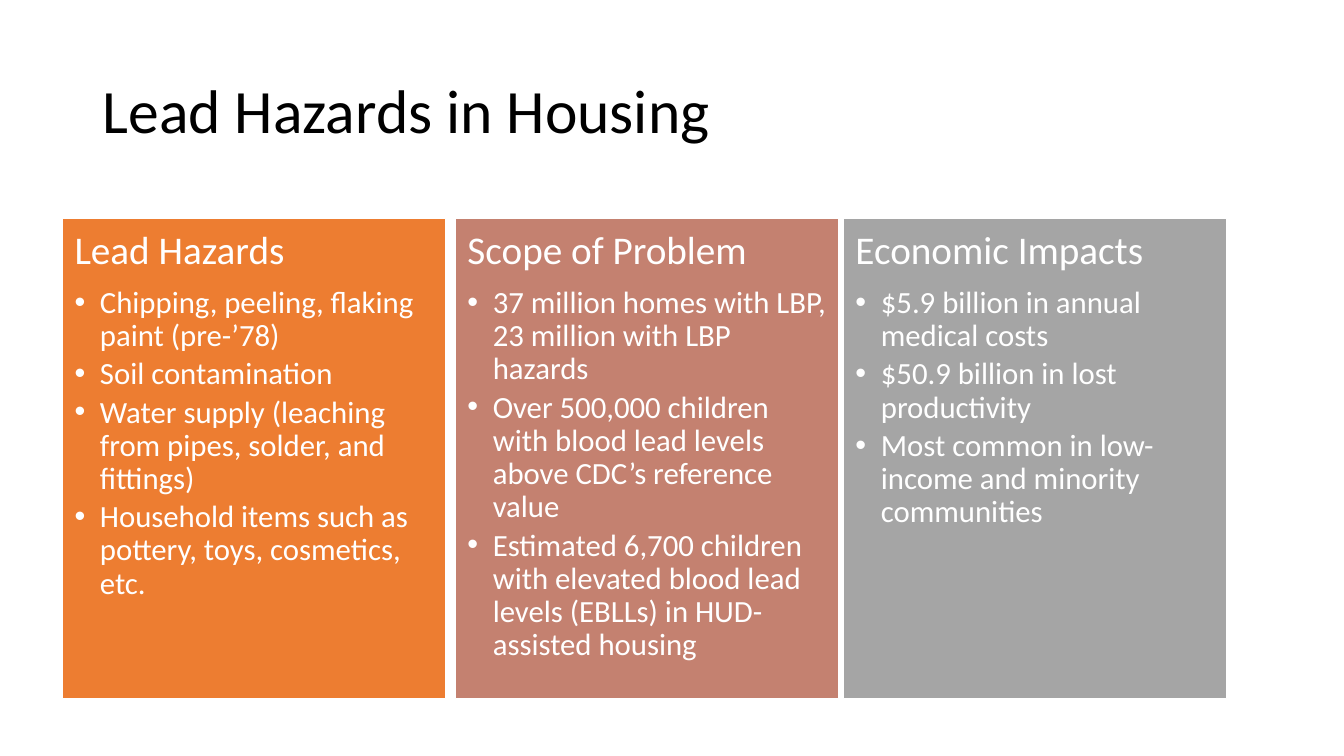
from lxml import etree
from pptx import Presentation
from pptx import util as u
from pptx.dml.color import RGBColor
from pptx.enum import shapes, text
from pptx.oxml.ns import qn

FONT = "Calibri"
WHITE = "FFFFFF"
COLUMN_TOP, COLUMN_WIDTH, COLUMN_HEIGHT = 5.51, 9.65, 12.09

# Left edge in cm, fill, heading, bullets
COLUMNS = [
    (1.58, "ED7D31", "Lead Hazards", [
        "Chipping, peeling, flaking paint (pre-’78)",
        "Soil contamination",
        "Water supply (leaching from pipes, solder, and fittings)",
        "Household items such as pottery, toys, cosmetics, etc.",
    ]),
    (11.48, "C48170", "Scope of Problem", [
        "37 million homes with LBP, 23 million with LBP hazards",
        "Over 500,000 children with blood lead levels above CDC’s reference value",
        "Estimated 6,700 children with elevated blood lead levels (EBLLs) "
        "in HUD-assisted housing",
    ]),
    (21.26, "A5A5A5", "Economic Impacts", [
        "$5.9 billion in annual medical costs",
        "$50.9 billion in lost productivity",
        "Most common in low-income and minority communities",
    ]),
]


def paint(color_format, hex_color):
    color_format.rgb = RGBColor.from_string(hex_color)


def write(paragraph, words, size, color, space_after=0):
    paragraph.alignment = text.PP_ALIGN.LEFT
    paragraph.line_spacing = 0.9
    paragraph.space_before = u.Pt(0)
    paragraph.space_after = u.Pt(space_after)
    run = paragraph.add_run()
    run.text = words
    run.font.name = FONT
    run.font.size = u.Pt(size)
    paint(run.font.color, color)


def add_bullet(paragraph):
    paragraph.level = 1
    properties = paragraph._p.get_or_add_pPr()
    indent = u.Cm(0.64)
    properties.set("marL", str(indent))
    properties.set("indent", str(-indent))
    etree.SubElement(properties, qn("a:buFont"), typeface="Arial")
    etree.SubElement(properties, qn("a:buChar"), char="•")


def place_title(slide, left, top, width, height):
    title = slide.shapes.title
    title.left, title.top = u.Cm(left), u.Cm(top)
    title.width, title.height = u.Cm(width), u.Cm(height)
    title.text_frame.vertical_anchor = text.MSO_ANCHOR.MIDDLE
    write(title.text_frame.paragraphs[0], "Lead Hazards in Housing", 44, "000000")


def place_column(slide, left, top, width, height, fill, heading, bullets):
    # Panel
    panel = slide.shapes.add_shape(
        shapes.MSO_SHAPE.RECTANGLE,
        u.Cm(left), u.Cm(top), u.Cm(width), u.Cm(height))
    panel.shadow.inherit = False
    panel.fill.solid()
    paint(panel.fill.fore_color, fill)
    paint(panel.line.color, WHITE)
    panel.line.width = u.Pt(1)

    # Heading and its bullets
    frame = panel.text_frame
    frame.word_wrap = True
    frame.vertical_anchor = text.MSO_ANCHOR.TOP
    frame.margin_left = frame.margin_right = u.Cm(0.3)
    frame.margin_top = frame.margin_bottom = u.Cm(0.3)
    write(frame.paragraphs[0], heading, 28, WHITE, space_after=10)
    for bullet in bullets:
        paragraph = frame.add_paragraph()
        write(paragraph, bullet, 22, WHITE, space_after=3.5)
        add_bullet(paragraph)


def main():
    deck = Presentation()
    deck.slide_width, deck.slide_height = u.Cm(33.87), u.Cm(19.05)
    slide = deck.slides.add_slide(deck.slide_layouts.get_by_name("Title Only"))
    place_title(slide, 2.33, 1.01, 29.21, 3.68)
    for left, fill, heading, bullets in COLUMNS:
        place_column(slide, left, COLUMN_TOP, COLUMN_WIDTH, COLUMN_HEIGHT,
                     fill, heading, bullets)
    deck.save("out.pptx")


if __name__ == "__main__":
    main()
